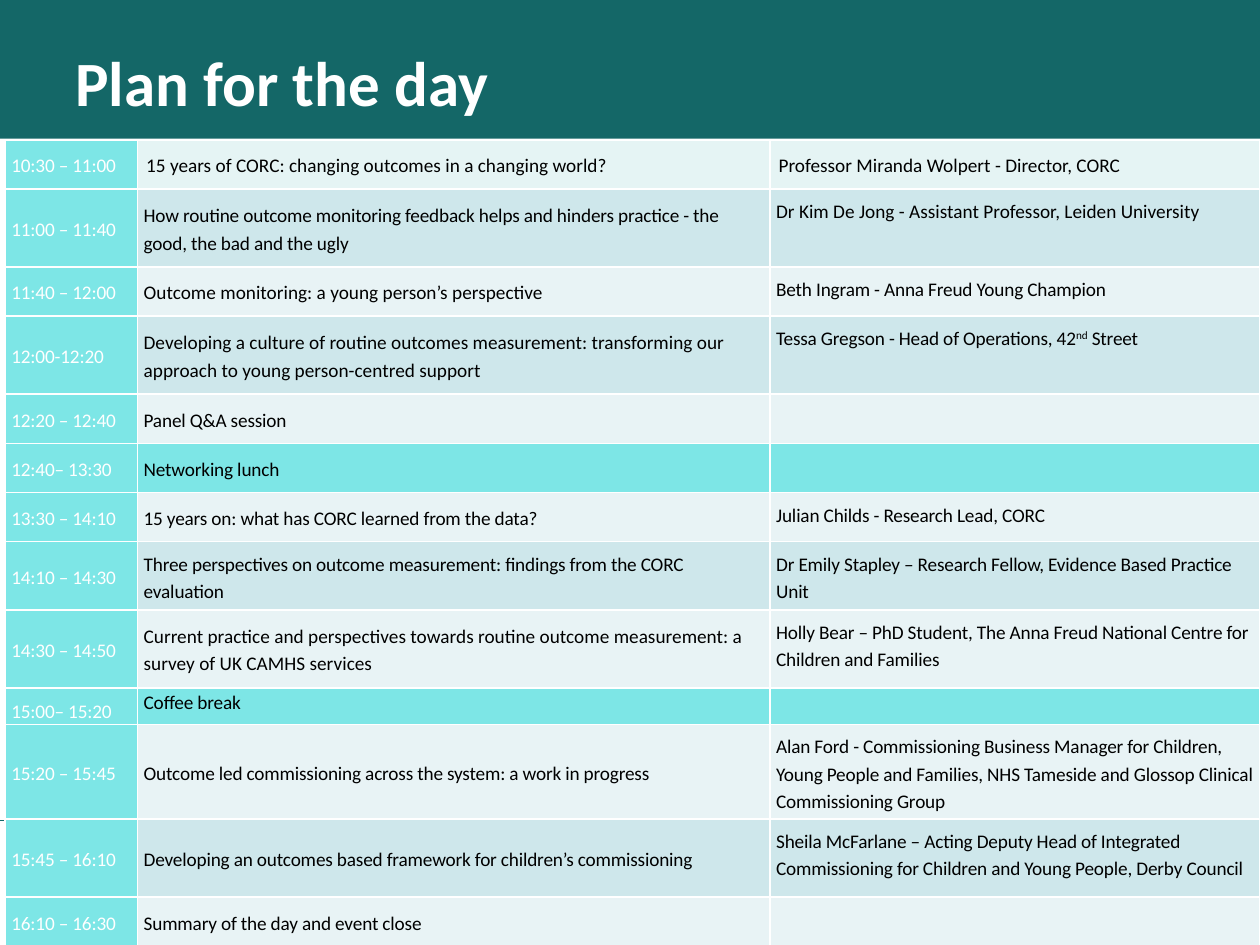
"""Build the "Plan for the day" agenda slide."""
import pptx
import pptx.dml.color
import pptx.enum.shapes
import pptx.enum.text
import pptx.oxml
import pptx.oxml.ns
import pptx.util

Inches = pptx.util.Inches
Pt = pptx.util.Pt
RGBColor = pptx.dml.color.RGBColor
Anchor = pptx.enum.text.MSO_ANCHOR

TEAL = RGBColor(0x14, 0x67, 0x67)
AQUA = RGBColor(0x7D, 0xE6, 0xE6)
MINT = RGBColor(0xE5, 0xF4, 0xF4)
PALE = RGBColor(0xE8, 0xF3, 0xF5)
MIST = RGBColor(0xCE, 0xE7, 0xEB)
WHITE = RGBColor(0xFF, 0xFF, 0xFF)
BLACK = RGBColor(0x00, 0x00, 0x00)

SHORT, TALL, SLIM = 0.39, 0.62, 0.29
COLUMNS = (1.05, 5.02, 3.89)
BREAKS = ("Networking lunch", "Coffee break")
UNTRACKED_SESSIONS = (0, 2, 3, 8)
UNTRACKED_SPEAKERS = (0, 1)
AGENDA = [
    (SHORT, "10:30 – 11:00", "15 years of CORC: changing outcomes in a changing world?",
     ["Professor Miranda Wolpert - Director, CORC"]),
    (TALL, "11:00 – 11:40",
     "How routine outcome monitoring feedback helps and hinders practice - the good, the bad and the ugly",
     ["Dr Kim De Jong - Assistant Professor, Leiden University"]),
    (SHORT, "11:40 – 12:00", "Outcome monitoring: a young person’s perspective",
     ["Beth Ingram - Anna Freud Young Champion"]),
    (TALL, "12:00-12:20",
     "Developing a culture of routine outcomes measurement: transforming our approach to "
     "young person-centred support",
     ["Tessa Gregson - Head of Operations, 42", "nd", " Street"]),
    (SHORT, "12:20 – 12:40", "Panel Q&A session", []),
    (SHORT, "12:40– 13:30", "Networking lunch", []),
    (SHORT, "13:30 – 14:10", "15 years on: what has CORC learned from the data?",
     ["Julian Childs - Research Lead, CORC"]),
    (SHORT, "14:10 – 14:30",
     "Three perspectives on outcome measurement: findings from the CORC evaluation",
     ["Dr Emily Stapley – Research Fellow, Evidence Based Practice Unit"]),
    (TALL, "14:30 – 14:50",
     "Current practice and perspectives towards routine outcome measurement: a survey of UK CAMHS services",
     ["Holly Bear – PhD Student, The Anna Freud National Centre for Children and Families"]),
    (SLIM, "15:00– 15:20", "Coffee break", []),
    (TALL, "15:20 – 15:45", "Outcome led commissioning across the system: a work in progress",
     ["Alan Ford - Commissioning Business Manager for Children, Young People and Families, "
      "NHS Tameside and Glossop Clinical Commissioning Group"]),
    (TALL, "15:45 – 16:10", "Developing an outcomes based framework for children’s commissioning",
     ["Sheila McFarlane – Acting Deputy Head of Integrated Commissioning for Children and "
      "Young People, Derby Council"]),
    (SHORT, "16:10 – 16:30", "Summary of the day and event close", []),
]


class Deck:
    """Hold the text style and the current slide."""

    def __init__(self, slide, font="Calibri", size=11):
        self.s, self.font, self.size = slide, font, size

    def style(self, p, size, color, bold=False):
        """Set the font of a paragraph."""
        p.font.name, p.font.size, p.font.bold = self.font, Pt(size), bold
        p.font.color.rgb = color

    def band(self, x, y, w, h, color):
        """Add a plain filled rectangle."""
        sp = self.s.shapes.add_shape(pptx.enum.shapes.MSO_SHAPE.RECTANGLE,
                                     Inches(x), Inches(y), Inches(w), Inches(h))
        sp.shadow.inherit = False
        sp.fill.solid()
        sp.fill.fore_color.rgb = color
        sp.line.fill.background()

    def rule(self, x1, y1, x2, y2, color, width):
        """Add a straight line."""
        line = self.s.shapes.add_connector(pptx.enum.shapes.MSO_CONNECTOR.STRAIGHT,
                                           Inches(x1), Inches(y1), Inches(x2), Inches(y2))
        line.line.color.rgb = color
        line.line.width = Pt(width)
        line._element.spPr.append(pptx.oxml.parse_xml(
            f'<a:effectLst {pptx.oxml.ns.nsdecls("a")}/>'))

    def title(self, x, y, w, h, text):
        """Add the slide heading."""
        tf = self.s.shapes.add_textbox(Inches(x), Inches(y), Inches(w), Inches(h)).text_frame
        tf.word_wrap = True
        tf.vertical_anchor = Anchor.MIDDLE
        p = tf.paragraphs[0]
        p.text = text
        self.style(p, 36, WHITE, bold=True)

    def cell(self, cell, parts, fill, color, margins, anchor, spacing=1.15, after=0, tracked=True):
        """Fill one table cell; the second text part is superscript."""
        cell.margin_left = cell.margin_right = Inches(margins[0])
        cell.margin_top = cell.margin_bottom = Inches(margins[1])
        cell.vertical_anchor = anchor
        tcPr = cell._tc.get_or_add_tcPr()
        for side in "LRTB":
            tcPr.append(pptx.oxml.parse_xml(
                f'<a:ln{side} {pptx.oxml.ns.nsdecls("a")} w="{Pt(1)}">'
                f'<a:solidFill><a:srgbClr val="{WHITE}"/></a:solidFill></a:ln{side}>'))
        cell.fill.solid()
        cell.fill.fore_color.rgb = fill
        p = cell.text_frame.paragraphs[0]
        p.line_spacing = spacing
        p.space_after = Pt(after)
        for i, part in enumerate(parts):
            r = p.add_run()
            r.text = part
            rPr = r._r.get_or_add_rPr()
            if tracked:
                rPr.set("spc", "-10")
            if i == 1:
                rPr.set("baseline", "30000")
        self.style(p, self.size, color)

    def agenda(self, x, y, columns, rows):
        """Add the timetable."""
        table = self.s.shapes.add_table(
            len(rows), len(columns), Inches(x), Inches(y), Inches(sum(columns)),
            Inches(sum(row[0] for row in rows))).table
        table.first_row = table.horz_banding = False
        for column, width in zip(table.columns, columns):
            column.width = Inches(width)
        for i, (height, time, session, speaker) in enumerate(rows):
            table.rows[i].height = Inches(height)
            if session in BREAKS:
                fill = AQUA
            elif i == 0:
                fill = MINT
            else:
                fill = MIST if i % 2 else PALE
            slim = height == SLIM
            inset = (0.05, 0 if slim else 0.06)
            wide = (0.07, 0.08) if i == 0 else inset
            anchor = Anchor.TOP if slim else Anchor.MIDDLE
            last = Anchor.MIDDLE if i == 0 else Anchor.TOP
            self.cell(table.cell(i, 0), [time], AQUA, WHITE, inset, anchor,
                      spacing=1.5 if slim else 1.15, after=10)
            self.cell(table.cell(i, 1), [session], fill, BLACK, wide, anchor,
                      tracked=i not in UNTRACKED_SESSIONS)
            self.cell(table.cell(i, 2), speaker, fill, BLACK, wide, last,
                      tracked=i not in UNTRACKED_SPEAKERS)


def main():
    """Build and save the slide."""
    prs = pptx.Presentation()
    prs.slide_width, prs.slide_height = Inches(10), Inches(7.5)
    deck = Deck(prs.slides.add_slide(prs.slide_layouts[6]))
    deck.band(0, 0, 10, 1.1, TEAL)
    deck.rule(10, 6.51, 0, 6.51, TEAL, 0.75)
    deck.title(0.5, 0.3, 9, 0.69, "Plan for the day")
    deck.agenda(0.04, 1.11, COLUMNS, AGENDA)
    prs.save("out.pptx")


if __name__ == "__main__":
    main()
